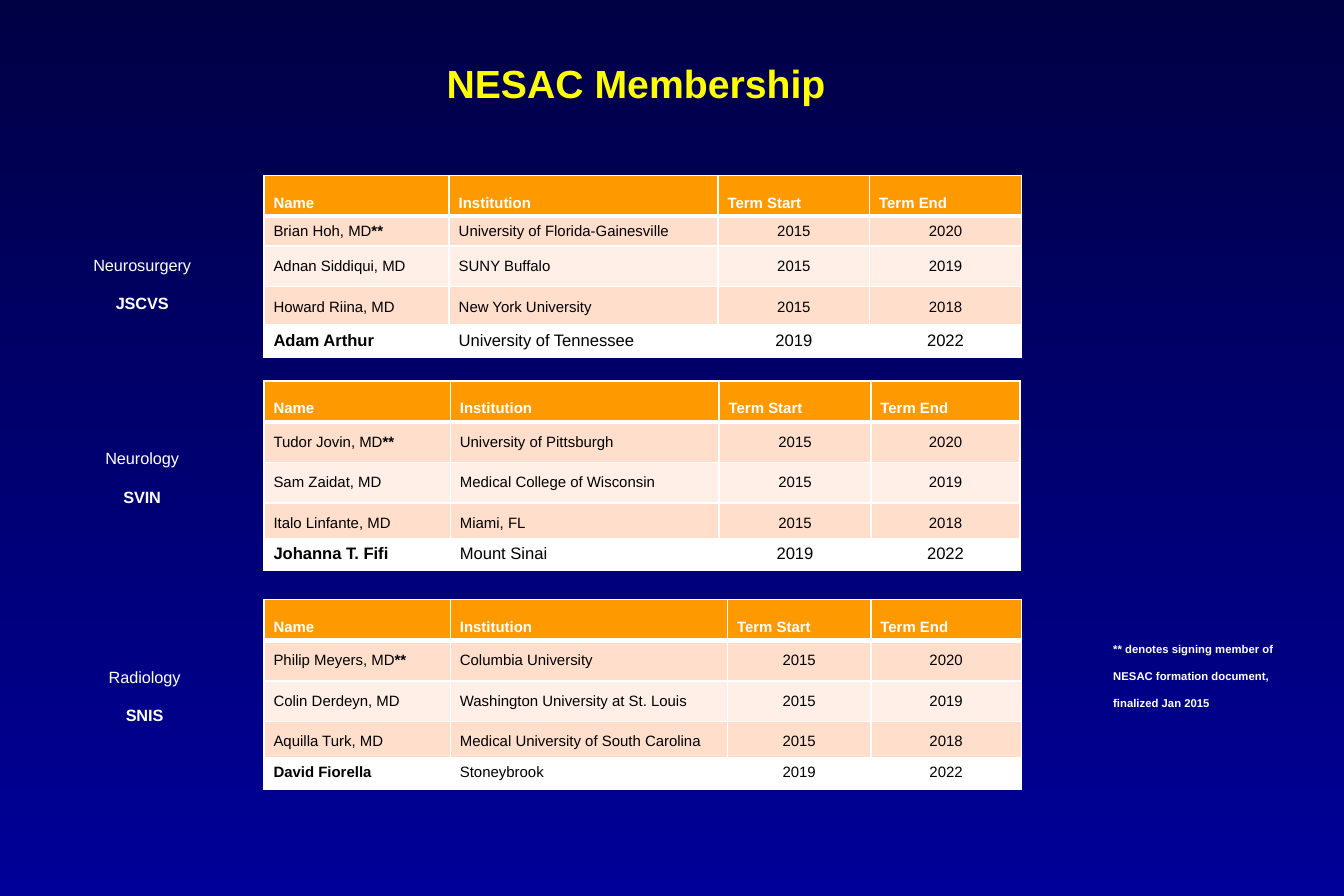
from pptx import Presentation
from pptx.dml.color import RGBColor
from pptx.enum.text import MSO_ANCHOR, PP_ALIGN
from pptx.oxml import parse_xml
from pptx.oxml.ns import nsdecls
from pptx.util import Inches, Pt

COLORS = {
    "top": "000045", "bottom": "000099", "title": "FFFF00", "header": "FF9900",
    "odd": "FFDECC", "even": "FFEFE7", "white": "FFFFFF", "black": "000000",
}
COLUMNS, ROWS = 45, 30
TABLE_LEFT = 8.84
HEADER = ("Name", "Institution", "Term Start", "Term End")
GROUPS = [
    {
        "label": ("Neurosurgery", "JSCVS"), "label_box": (1.32, 7.72, 6.88, 2.68),
        "top": 5.88, "widths": (6.2, 9, 5.08, 5.08), "heights": (1.36, 1, 1.36, 1.36),
        "members": [
            ("Brian Hoh, MD**", "University of Florida-Gainesville", "2015", "2020"),
            ("Adnan Siddiqui, MD", "SUNY Buffalo", "2015", "2019"),
            ("Howard Riina, MD", "New York University", "2015", "2018"),
        ],
        "new_member": ("Adam Arthur", "University of Tennessee", "2019", "2022"),
        "new_top": 10.88, "new_height": 1.04, "new_size": 10,
    },
    {
        "label": ("Neurology", "SVIN"), "label_box": (2.04, 14.2, 5.44, 2.68),
        "top": 12.76, "widths": (6.24, 9, 5.08, 5), "heights": (1.36,) * 4,
        "members": [
            ("Tudor Jovin, MD**", "University of Pittsburgh", "2015", "2020"),
            ("Sam Zaidat, MD", "Medical College of Wisconsin", "2015", "2019"),
            ("Italo Linfante, MD", "Miami, FL", "2015", "2018"),
        ],
        "new_member": ("Johanna T. Fifi", "Mount Sinai", "2019", "2022"),
        "new_top": 18.04, "new_height": 1, "new_size": 10,
    },
    {
        "label": ("Radiology", "SNIS"), "label_box": (2.2, 21.52, 5.28, 2.68),
        "top": 20.08, "widths": (6.24, 9.28, 4.8, 5.04), "heights": (1.36,) * 4,
        "members": [
            ("Philip Meyers, MD**", "Columbia University", "2015", "2020"),
            ("Colin Derdeyn, MD", "Washington University at St. Louis", "2015", "2019"),
            ("Aquilla Turk, MD", "Medical University of South Carolina", "2015", "2018"),
        ],
        "new_member": ("David Fiorella", "Stoneybrook", "2019", "2022"),
        "new_top": 25.36, "new_height": 1, "new_size": 9,
    },
]


def write_text(paragraph, text, size, color="white", bold=False, align=PP_ALIGN.LEFT,
               baseline=0):
    """Append one run; baseline is a percentage, negative for lowered text."""
    paragraph.alignment = align
    run = paragraph.add_run()
    run.text = text
    font = run.font
    font.name, font.size, font.bold = "Arial", Pt(size), bold
    font.color.rgb = RGBColor.from_string(COLORS[color])
    if baseline:
        run._r.get_or_add_rPr().set("baseline", str(baseline * 1000))


def add_borders(cell, top=1, bottom=1):
    properties = cell._tc.get_or_add_tcPr()
    for side, width in (("L", 1), ("R", 1), ("T", top), ("B", bottom)):
        properties.append(parse_xml(
            f'<a:ln{side} {nsdecls("a")} w="{Pt(width)}"><a:solidFill>'
            f'<a:srgbClr val="{COLORS["white"]}"/></a:solidFill></a:ln{side}>'))


class MembershipSlide:
    def __init__(self, presentation):
        self.column = presentation.slide_width / COLUMNS
        self.row = presentation.slide_height / ROWS
        self.slide = presentation.slides.add_slide(presentation.slide_layouts[6])

    def place(self, left, top, width, height):
        """Turn grid columns and rows into slide lengths."""
        return (round(left * self.column), round(top * self.row),
                round(width * self.column), round(height * self.row))

    def background(self):
        fill = self.slide.background.fill
        fill.gradient()
        fill.gradient_angle = 270
        for stop, name in zip(fill.gradient_stops, ("top", "bottom")):
            stop.color.rgb = RGBColor.from_string(COLORS[name])

    def text_box(self, box, lines, anchor=MSO_ANCHOR.TOP, **text_format):
        """Write (text, bold) lines as paragraphs of one box."""
        frame = self.slide.shapes.add_textbox(*self.place(*box)).text_frame
        frame.word_wrap = True
        frame.vertical_anchor = anchor
        for index, (text, bold) in enumerate(lines):
            paragraph = frame.add_paragraph() if index else frame.paragraphs[0]
            write_text(paragraph, text, bold=bold, **text_format)

    def table(self, top, widths, heights, records):
        box = self.place(TABLE_LEFT, top, sum(widths), sum(heights))
        table = self.slide.shapes.add_table(len(heights), len(widths), *box).table
        table.first_row = table.horz_banding = False
        for column, width in zip(table.columns, widths):
            column.width = round(width * self.column)
        for row, height in zip(table.rows, heights):
            row.height = round(height * self.row)
        for row, record in zip(table.rows, records):
            for cell, text in zip(row.cells, record):
                yield cell, text

    def style_cell(self, cell, fill, anchor=MSO_ANCHOR.MIDDLE, **borders):
        add_borders(cell, **borders)
        cell.fill.solid()
        cell.fill.fore_color.rgb = RGBColor.from_string(COLORS[fill])
        cell.vertical_anchor = anchor
        cell.margin_left = cell.margin_right = Inches(0.08)
        cell.margin_top = cell.margin_bottom = Inches(0.04)
        return cell.text_frame.paragraphs[0]

    def member_table(self, group):
        records = [HEADER, *group["members"]]
        cells = self.table(group["top"], group["widths"], group["heights"], records)
        for index, (cell, text) in enumerate(cells):
            row, column = divmod(index, len(HEADER))
            if row == 0:
                paragraph = self.style_cell(cell, "header", MSO_ANCHOR.BOTTOM, bottom=3)
                write_text(paragraph, text, 9, bold=True)
                continue
            paragraph = self.style_cell(cell, "odd" if row % 2 else "even",
                                        top=3 if row == 1 else 1)
            align = PP_ALIGN.CENTER if column > 1 else PP_ALIGN.LEFT
            name, mark, _ = text.partition("**")
            write_text(paragraph, name, 9, "black", align=align)
            if mark:
                write_text(paragraph, mark, 9, "black", bold=True)

    def new_member_table(self, group):
        cells = self.table(group["new_top"], group["widths"], [group["new_height"]],
                           [group["new_member"]])
        for column, (cell, text) in enumerate(cells):
            paragraph = self.style_cell(cell, "white", bottom=3)
            write_text(paragraph, text, group["new_size"], "black", bold=column == 0,
                       align=PP_ALIGN.CENTER if column > 1 else PP_ALIGN.LEFT)


def main():
    presentation = Presentation()
    presentation.slide_width, presentation.slide_height = Inches(11.25), Inches(7.5)
    page = MembershipSlide(presentation)
    page.background()
    page.text_box((5.16, 1.72, 32.28, 2.08), [("NESAC Membership", True)],
                  MSO_ANCHOR.MIDDLE, size=23.6, color="title", align=PP_ALIGN.CENTER)
    for group in GROUPS:
        page.member_table(group)
    for group in GROUPS:
        specialty, society = group["label"]
        page.text_box(group["label_box"], [(specialty, False), (society, True)],
                      size=16.9, align=PP_ALIGN.CENTER, baseline=-25)
    note = "** denotes signing member of NESAC formation document, finalized Jan 2015"
    page.text_box((36.88, 20.88, 6.4, 5.16), [(note, True)], size=11.8, baseline=-25)
    for group in GROUPS:
        page.new_member_table(group)
    presentation.save("out.pptx")


if __name__ == "__main__":
    main()
